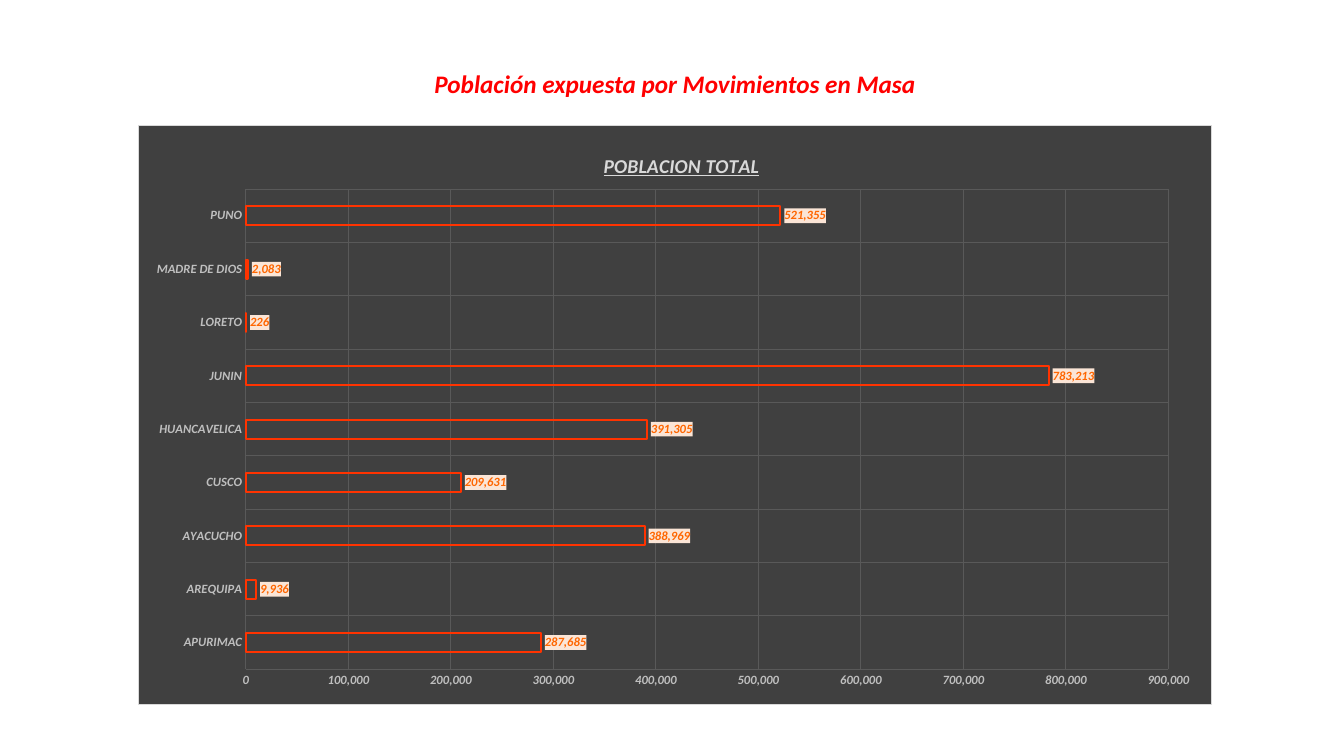
import pptx
import pptx.chart.data
import pptx.dml.color
import pptx.enum.chart
import pptx.enum.text
import pptx.oxml
import pptx.oxml.ns
import pptx.util

Inches = pptx.util.Inches
qn = pptx.oxml.ns.qn

POPULATION = {
    "APURIMAC": 287685,
    "AREQUIPA": 9936,
    "AYACUCHO": 388969,
    "CUSCO": 209631,
    "HUANCAVELICA": 391305,
    "JUNIN": 783213,
    "LORETO": 226,
    "MADRE DE DIOS": 2083,
    "PUNO": 521355,
}
NUMBER_FORMAT = "#,##0"


def color(hex_value):
    return pptx.dml.color.RGBColor.from_string(hex_value)


def set_values(target, values):
    for name, value in values.items():
        setattr(target, name, value)


def style_font(font, size, hex_value, **extra):
    set_values(font, {"name": "Calibri", "size": pptx.util.Pt(size),
                      "bold": True, "italic": True, **extra})
    font.color.rgb = color(hex_value)


def style_line(line, hex_value, width):
    line.color.rgb = color(hex_value)
    line.width = pptx.util.Pt(width)


def box_properties(fill, border=None):
    """Fill and border of a chart part that has no format object."""
    line = "<a:ln><a:noFill/></a:ln>"
    if border:
        line = (f'<a:ln w="9525"><a:solidFill><a:srgbClr val="{border}"/>'
                "</a:solidFill></a:ln>")
    return pptx.oxml.parse_xml(
        f'<c:spPr {pptx.oxml.ns.nsdecls("c", "a")}><a:solidFill>'
        f'<a:srgbClr val="{fill}"/></a:solidFill>{line}</c:spPr>')


def place_part(parent, index, fractions, inner=False):
    """Give a chart part a fixed place, in fractions of the chart."""
    for layout in parent.findall(qn("c:layout")):
        parent.remove(layout)
    target = '<c:layoutTarget val="inner"/>' if inner else ""
    modes = "".join(f'<c:{axis}Mode val="edge"/>' for axis in "xy")
    values = "".join(f'<c:{name} val="{value}"/>'
                     for name, value in zip("xywh", fractions))
    parent.insert(index, pptx.oxml.parse_xml(
        f'<c:layout {pptx.oxml.ns.nsdecls("c")}><c:manualLayout>'
        f"{target}{modes}{values}</c:manualLayout></c:layout>"))


def add_heading(slide, left, top, width, height):
    box = slide.shapes.add_textbox(*map(Inches, (left, top, width, height)))
    box.text_frame.word_wrap = False
    paragraph = box.text_frame.paragraphs[0]
    paragraph.alignment = pptx.enum.text.PP_ALIGN.CENTER
    run = paragraph.add_run()
    run.text = "Población expuesta por Movimientos en Masa"
    style_font(run.font, 18, "FF0000")


def style_axis(axis):
    set_values(axis, {
        "has_major_gridlines": True,
        "major_tick_mark": pptx.enum.chart.XL_TICK_MARK.NONE,
        "minor_tick_mark": pptx.enum.chart.XL_TICK_MARK.NONE,
    })
    style_line(axis.major_gridlines.format.line, "595959", 0.75)
    axis.format.line.fill.background()
    style_font(axis.tick_labels.font, 9, "BFBFBF")


def style_bars(plot):
    set_values(plot, {"gap_width": 182, "overlap": -50,
                      "vary_by_categories": False})
    series = plot.series[0]
    series.invert_if_negative = False
    series.format.fill.background()
    style_line(series.format.line, "FF3300", 1.5)

    # Value labels on a pale box
    labels = series.data_labels
    set_values(labels, {
        "show_value": True,
        "number_format": NUMBER_FORMAT,
        "number_format_is_linked": False,
        "position": pptx.enum.chart.XL_LABEL_POSITION.OUTSIDE_END,
    })
    style_font(labels.font, 9, "FF6600")
    label_text = series.data_labels.font and \
        plot.series[0].format and \
        plot.chart.element.find(".//" + qn("c:dLbls") + "/" + qn("c:txPr"))
    label_text.addprevious(box_properties("FBE5D6"))


def add_population_chart(slide, left, top, width, height):
    data = pptx.chart.data.CategoryChartData(number_format=NUMBER_FORMAT)
    data.categories = list(POPULATION)
    data.add_series("POBLACION TOTAL", list(POPULATION.values()))
    chart = slide.shapes.add_chart(
        pptx.enum.chart.XL_CHART_TYPE.BAR_CLUSTERED,
        *map(Inches, (left, top, width, height)), data).chart
    set_values(chart.font, {"name": "Calibri", "size": pptx.util.Pt(10)})
    chart.has_legend = False

    # Title
    chart.has_title = True
    paragraph = chart.chart_title.text_frame.paragraphs[0]
    run = paragraph.add_run()
    run.text = "POBLACION TOTAL"
    style_font(run.font, 14, "D9D9D9", underline=True)

    # Axes and bars
    for axis in (chart.category_axis, chart.value_axis):
        style_axis(axis)
    set_values(chart.value_axis, {"minimum_scale": 0, "maximum_scale": 900000,
                                  "major_unit": 100000})
    set_values(chart.value_axis.tick_labels, {
        "number_format": NUMBER_FORMAT, "number_format_is_linked": False})
    style_bars(chart.plots[0])

    # Background and placing
    chart_space = chart.element
    chart_space.find(qn("c:chart")).addnext(box_properties("404040", "D9D9D9"))
    place_part(chart_space.find(".//" + qn("c:title")), 1, (0.43, 0.04))
    place_part(chart_space.find(".//" + qn("c:plotArea")), 0,
               (0.1, 0.11, 0.86, 0.83), inner=True)


def main():
    presentation = pptx.Presentation()
    set_values(presentation, {"slide_width": Inches(13.33),
                              "slide_height": Inches(7.5)})
    slide = presentation.slides.add_slide(presentation.slide_layouts[6])
    add_heading(slide, 4.18, 0.63, 5.03, 0.4)
    add_population_chart(slide, 1.37, 1.24, 10.65, 5.75)
    presentation.save("out.pptx")


if __name__ == "__main__":
    main()
